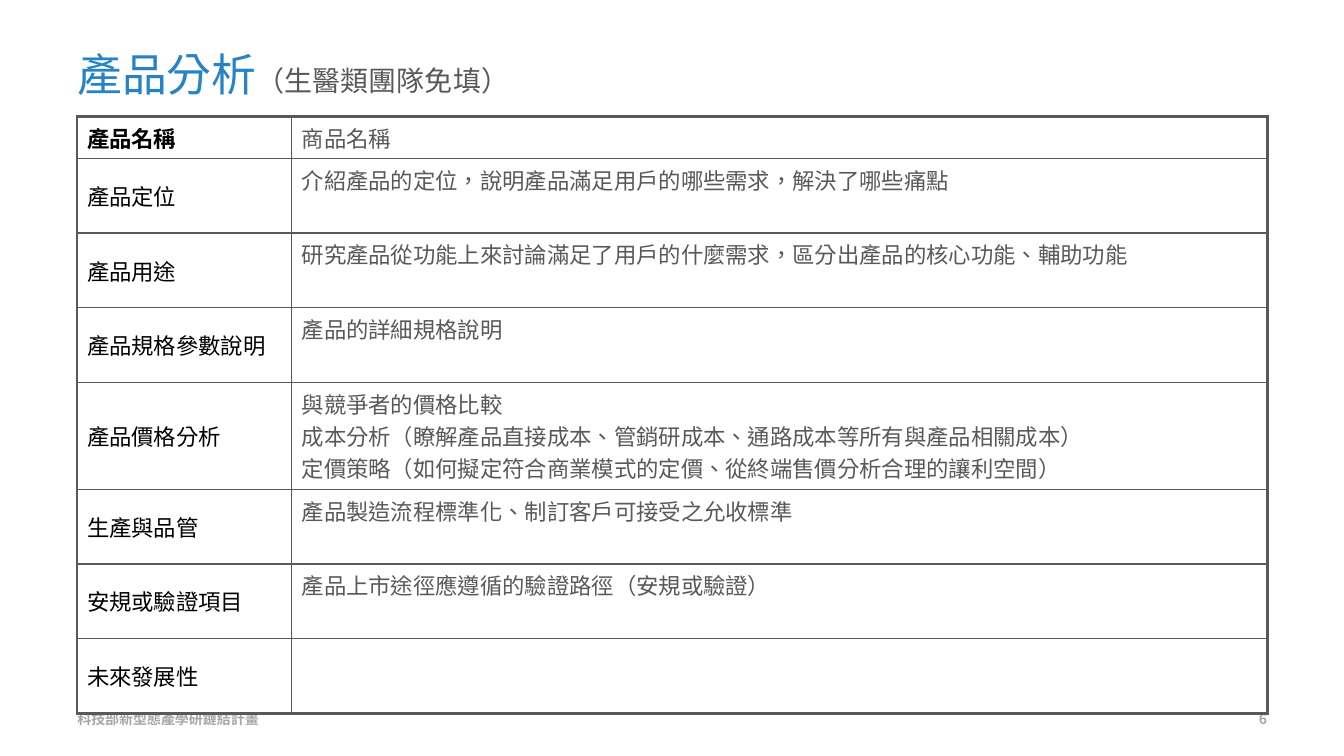
from dataclasses import dataclass

from lxml import etree
from pptx import Presentation
from pptx.dml.color import RGBColor
from pptx.enum.text import MSO_ANCHOR, PP_ALIGN
from pptx.oxml.ns import qn
from pptx.slide import Slide
from pptx.table import _Cell
from pptx.text.text import _Run
from pptx.util import Cm, Pt

LEFT, RIGHT = PP_ALIGN.LEFT, PP_ALIGN.RIGHT
TOP, MIDDLE = MSO_ANCHOR.TOP, MSO_ANCHOR.MIDDLE


@dataclass(frozen=True)
class Theme:
    font: str = "Noto Sans CJK SC"
    blue: str = "2683C6"
    gray: str = "595959"
    pale: str = "A6A6A6"
    black: str = "000000"
    title: int = 32
    note: int = 20
    body: int = 16
    small: int = 10
    thin: float = 1
    thick: float = 2.25


@dataclass(frozen=True)
class Label:
    text: str
    left: float
    top: float
    width: float
    height: float
    size: int
    color: str
    bold: bool = False
    align: PP_ALIGN = LEFT


@dataclass(frozen=True)
class Row:
    name: str
    text: str
    height: float = 1.88
    bold: bool = False


THEME = Theme()
TITLE = Label("產品分析", 1.7, 0.76, 30.48, 2.18, THEME.title, THEME.blue)
NOTE = "（生醫類團隊免填）"
FOOTER = (
    Label("科技部新型態產學研鏈結計畫", 1.7, 17.6, 7.9, 1.02,
          THEME.small, THEME.pale, True),
    Label("6", 24.28, 17.6, 7.9, 1.02, THEME.small, THEME.pale, True, RIGHT),
)
COLS = (5.41, 24.6)
ROWS = (
    Row("產品名稱", "商品名稱", 1.06, True),
    Row("產品定位", "介紹產品的定位，說明產品滿足用戶的哪些需求，解決了哪些痛點"),
    Row("產品用途", "研究產品從功能上來討論滿足了用戶的什麼需求，區分出產品的核心功能、輔助功能"),
    Row("產品規格參數說明", "產品的詳細規格說明"),
    Row("產品價格分析",
        "與競爭者的價格比較\n"
        "成本分析（瞭解產品直接成本、管銷研成本、通路成本等所有與產品相關成本）\n"
        "定價策略（如何擬定符合商業模式的定價、從終端售價分析合理的讓利空間）", 2.7),
    Row("生產與品管", "產品製造流程標準化、制訂客戶可接受之允收標準"),
    Row("安規或驗證項目", "產品上市途徑應遵循的驗證路徑（安規或驗證）"),
    Row("未來發展性", ""),
)


def style(run: _Run, size: int, color: str, bold: bool = False) -> None:
    font = run.font
    font.size, font.bold, font.name = Pt(size), bold, THEME.font
    font.color.rgb = RGBColor.from_string(color)
    # East Asian typeface and language
    props = run._r.get_or_add_rPr()
    props.set("lang", "zh-TW")
    face = etree.Element(qn("a:ea"), typeface=THEME.font)
    props.find(qn("a:latin")).addnext(face)


def add_label(slide: Slide, label: Label, note: str = "") -> None:
    box = slide.shapes.add_textbox(
        Cm(label.left), Cm(label.top), Cm(label.width), Cm(label.height))
    frame = box.text_frame
    frame.word_wrap = True
    frame.vertical_anchor = MIDDLE
    frame.text = label.text
    para = frame.paragraphs[0]
    para.alignment = label.align
    style(para.runs[0], label.size, label.color, label.bold)
    if note:
        run = para.add_run()
        run.text = note
        style(run, THEME.note, THEME.gray)


def set_edges(cell: _Cell, thick: set[str]) -> None:
    props = cell._tc.get_or_add_tcPr()
    for side in "LRTB":
        width = THEME.thick if side in thick else THEME.thin
        line = etree.SubElement(props, qn(f"a:ln{side}"), w=str(Pt(width)))
        fill = etree.SubElement(line, qn("a:solidFill"))
        etree.SubElement(fill, qn("a:srgbClr"), val=THEME.gray)


def fill_cell(cell: _Cell, text: str, color: str, bold: bool,
              anchor: MSO_ANCHOR, thick: set[str]) -> None:
    cell.text_frame.text = text
    cell.vertical_anchor = anchor
    for para in cell.text_frame.paragraphs:
        for run in para.runs:
            style(run, THEME.body, color, bold)
    set_edges(cell, thick)
    cell.fill.background()


def add_grid(slide: Slide) -> None:
    high = sum(row.height for row in ROWS)
    grid = slide.shapes.add_table(
        len(ROWS), len(COLS), Cm(1.94), Cm(2.93), Cm(sum(COLS)), Cm(high)).table
    grid.first_row = grid.horz_banding = False
    for col, width in zip(grid.columns, COLS):
        col.width = Cm(width)
    for i, row in enumerate(ROWS):
        grid.rows[i].height = Cm(row.height)
        # Heavy lines on the outer frame only
        ends = {"T"} if i == 0 else {"B"} if i == len(ROWS) - 1 else set()
        fill_cell(grid.cell(i, 0), row.name, THEME.black, row.bold,
                  MIDDLE, ends | {"L"})
        fill_cell(grid.cell(i, 1), row.text, THEME.gray, False,
                  TOP, ends | {"R"})


def main() -> None:
    deck = Presentation()
    deck.slide_width, deck.slide_height = Cm(33.87), Cm(19.05)
    slide = deck.slides.add_slide(deck.slide_layouts[6])

    # Heading
    add_label(slide, TITLE, NOTE)
    # Footer and page number
    for label in FOOTER:
        add_label(slide, label)
    # Product table
    add_grid(slide)

    deck.save("out.pptx")


if __name__ == "__main__":
    main()
